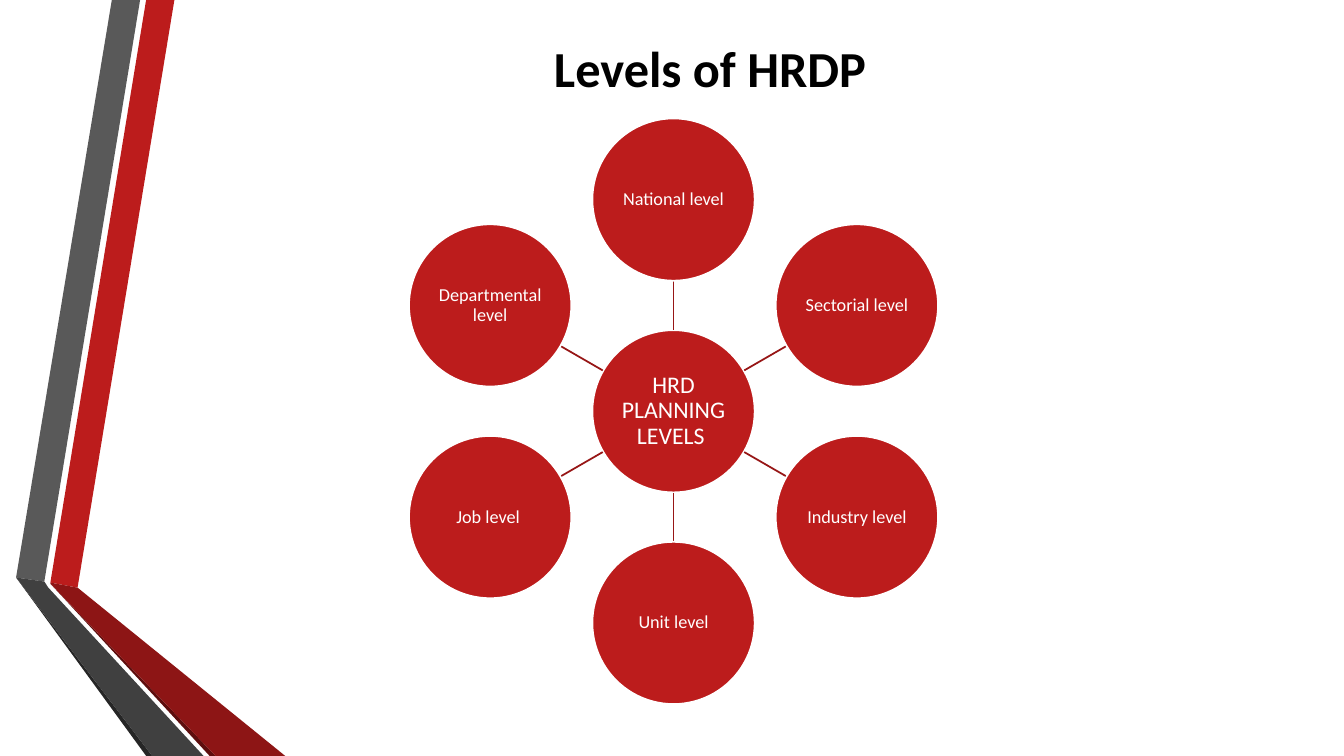
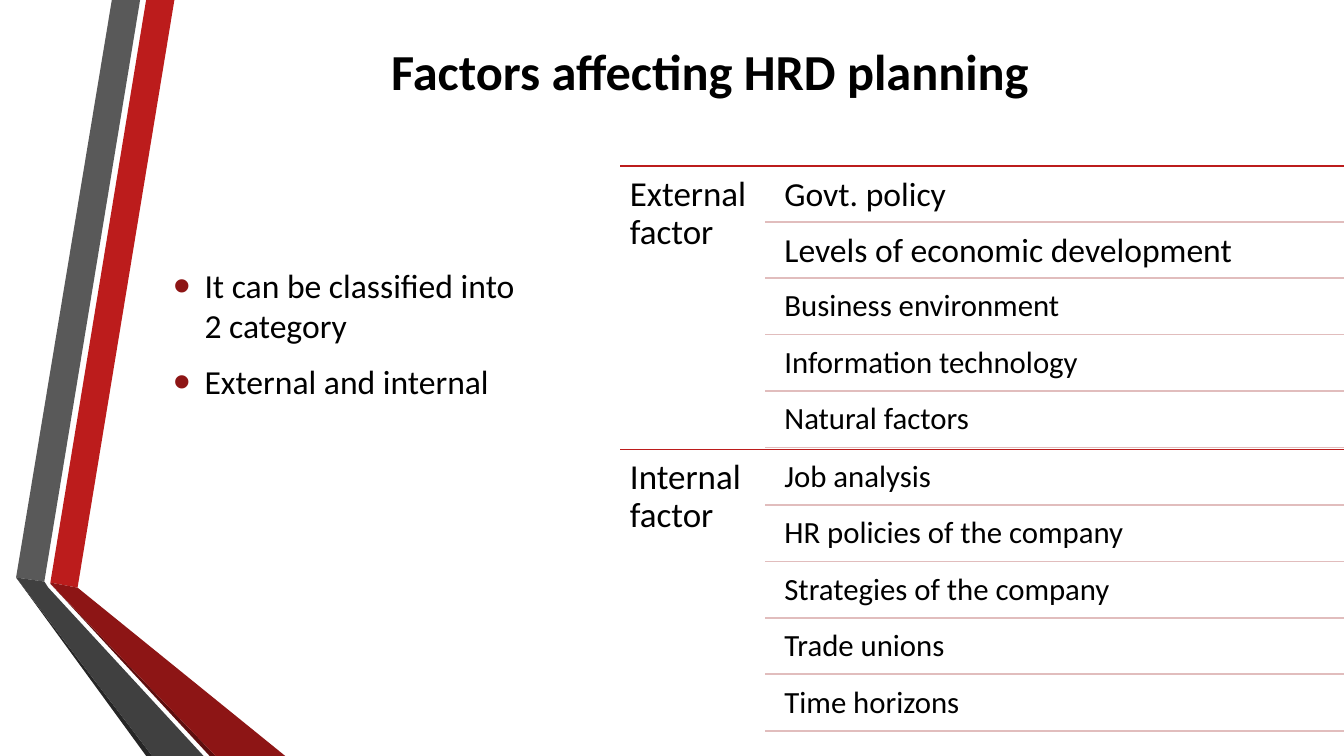
from dataclasses import dataclass
from math import cos, radians, sin

from lxml.etree import SubElement
from pptx import Presentation
from pptx.dml.color import RGBColor
from pptx.enum.shapes import MSO_CONNECTOR, MSO_SHAPE
from pptx.enum.text import MSO_ANCHOR, PP_ALIGN
from pptx.oxml.ns import qn
from pptx.slide import Slide, SlideLayout
from pptx.text.text import TextFrame
from pptx.util import Inches, Pt

FONT = "Calibri"
RED, DARK_RED, SPOKE_RED, PALE_RED = "BC1C1C", "8D1515", "971616", "E1BDBD"
BLACK, WHITE = "000000", "FFFFFF"
SLIDE_WIDTH, SLIDE_HEIGHT = 13.33, 7.5

Point = tuple[float, float]


@dataclass(frozen=True)
class Band:
    """A filled strip of the ribbon on the left."""

    color: str
    outline: tuple[Point, ...]


@dataclass(frozen=True)
class Factor:
    """One factor and its text size."""

    name: str
    size: int = 22


@dataclass(frozen=True)
class FactorGroup:
    """A labelled group of factors starting at a given height."""

    label: str
    top: float
    factors: tuple[Factor, ...]


BANDS = (
    Band(RED, ((0.5, 5.78), (0.77, 5.83), (1.73, 0), (1.45, 0))),
    Band("595959", ((1.39, 0), (1.11, 0), (0.16, 5.73), (0.44, 5.77))),
    Band("262626", ((0.16, 5.73), (1.45, 7.5), (1.51, 7.5))),
    Band("5E0E0E", ((0.5, 5.79), (2.08, 7.5), (2.14, 7.5))),
    Band(DARK_RED, ((0.5, 5.79), (2.14, 7.5), (2.83, 7.5), (0.77, 5.83), (0.5, 5.78))),
    Band("404040", ((2.02, 7.5), (0.48, 5.83), (0.44, 5.77), (0.16, 5.73), (1.51, 7.5))),
)

LEVELS = (
    "National level",
    "Sectorial level",
    "Industry level",
    "Unit level",
    "Job level ",
    "Departmental level",
)
HUB_X, HUB_Y = 6.68, 4.08
RING_RADIUS = 2.1
CIRCLE_SIZE = 1.61
SPOKE_START, SPOKE_END = 0.81, 1.29

CATEGORIES = ("It can be classified into 2 category", "External and internal")
FACTOR_GROUPS = (
    FactorGroup("External factor", 1.65, (
        Factor("Govt. policy", 24),
        Factor("Levels of economic development", 24),
        Factor("Business environment"),
        Factor("Information technology"),
        Factor("Natural factors"),
    )),
    FactorGroup("Internal factor", 4.46, (
        Factor("Job analysis"),
        Factor("HR policies of the company"),
        Factor("Strategies of the company"),
        Factor("Trade unions"),
        Factor("Time horizons"),
    )),
)
GROUP_LEFT, RULE_LEFT, FACTOR_LEFT = 6.15, 7.59, 7.69
ROW_PITCH, ROW_HEIGHT = 0.56, 0.53


def rgb(color: str) -> RGBColor:
    """Turn a hex string into a colour."""
    return RGBColor.from_string(color)


def style_text(frame: TextFrame, size: float, color: str = BLACK, bold: bool = False) -> None:
    """Apply the deck font to every run of a frame."""
    for paragraph in frame.paragraphs:
        for run in paragraph.runs:
            run.font.name = FONT
            run.font.size = Pt(size)
            run.font.bold = bold
            run.font.color.rgb = rgb(color)


def set_margins(frame: TextFrame, margin: float) -> None:
    """Give all four sides of a frame the same margin."""
    frame.margin_left = frame.margin_right = Inches(margin)
    frame.margin_top = frame.margin_bottom = Inches(margin)


def add_ribbon(slide: Slide, layout: SlideLayout) -> None:
    """Draw the ribbon and place it behind everything on the shared layout."""
    for depth, band in enumerate(BANDS, start=2):
        corners = [(Inches(x), Inches(y)) for x, y in band.outline]
        builder = slide.shapes.build_freeform(*corners[0])
        builder.add_line_segments(corners[1:], close=True)
        strip = builder.convert_to_shape()
        strip.shadow.inherit = False
        strip.fill.solid()
        strip.fill.fore_color.rgb = rgb(band.color)
        strip.line.fill.background()
        layout.shapes.element.insert(depth, strip.element)


def add_title(slide: Slide, wording: str, top: float) -> None:
    """Place and format the title placeholder."""
    title = slide.shapes.title
    title.left, title.top = Inches(1.62), Inches(top)
    title.width, title.height = Inches(10.96), Inches(0.7)
    frame = title.text_frame
    frame.text = wording
    frame.vertical_anchor = MSO_ANCHOR.MIDDLE
    frame.paragraphs[0].alignment = PP_ALIGN.CENTER
    style_text(frame, 36, bold=True)


def add_line(slide: Slide, start: Point, end: Point, color: str) -> None:
    """Draw a straight line without a shadow."""
    line = slide.shapes.add_connector(
        MSO_CONNECTOR.STRAIGHT, *(Inches(value) for value in start + end)
    )
    line.line.color.rgb = rgb(color)
    line.line.width = Pt(1.25)
    SubElement(line.element.spPr, qn("a:effectLst"))


def add_text(
    slide: Slide, wording: str, left: float, top: float,
    width: float, height: float, size: float, margin: float = 0.09,
) -> None:
    """Add a wrapped text box with tight line spacing."""
    box = slide.shapes.add_textbox(Inches(left), Inches(top), Inches(width), Inches(height))
    frame = box.text_frame
    frame.word_wrap = True
    set_margins(frame, margin)
    frame.text = wording
    frame.paragraphs[0].line_spacing = 0.9
    style_text(frame, size)


def add_circle(slide: Slide, wording: str, center: Point, size: float) -> None:
    """Draw a labelled circle around a centre."""
    x, y = center
    circle = slide.shapes.add_shape(
        MSO_SHAPE.OVAL, Inches(x - CIRCLE_SIZE / 2), Inches(y - CIRCLE_SIZE / 2),
        Inches(CIRCLE_SIZE), Inches(CIRCLE_SIZE),
    )
    circle.shadow.inherit = False
    circle.fill.solid()
    circle.fill.fore_color.rgb = rgb(RED)
    circle.line.color.rgb = rgb(WHITE)
    circle.line.width = Pt(1.25)
    frame = circle.text_frame
    frame.word_wrap = True
    set_margins(frame, 0.01)
    frame.vertical_anchor = MSO_ANCHOR.MIDDLE
    frame.text = wording
    frame.paragraphs[0].alignment = PP_ALIGN.CENTER
    frame.paragraphs[0].line_spacing = 0.9
    style_text(frame, size, WHITE)


def ring_point(angle: float, radius: float) -> Point:
    """Locate a point around the hub, clockwise from the top."""
    return HUB_X + radius * sin(radians(angle)), HUB_Y - radius * cos(radians(angle))


def add_levels(slide: Slide) -> None:
    """Draw the hub with its ring of levels."""
    add_circle(slide, "HRD PLANNING LEVELS ", (HUB_X, HUB_Y), 17)
    for index, level in enumerate(LEVELS):
        angle = index * 360 / len(LEVELS)
        add_line(slide, ring_point(angle, SPOKE_START), ring_point(angle, SPOKE_END), SPOKE_RED)
        add_circle(slide, level, ring_point(angle, RING_RADIUS), 13)


def add_categories(slide: Slide) -> None:
    """Write the bulleted list of categories."""
    box = slide.shapes.add_textbox(Inches(1.62), Inches(2.58), Inches(3.69), Inches(1.5))
    frame = box.text_frame
    frame.word_wrap = True
    frame.text = "\n".join(CATEGORIES)
    for paragraph in frame.paragraphs:
        paragraph.space_after = Pt(11)
        properties = paragraph._p.get_or_add_pPr()
        properties.set("marL", str(Inches(0.31)))
        properties.set("indent", str(-Inches(0.31)))
        bullet_color = SubElement(properties, qn("a:buClr"))
        SubElement(bullet_color, qn("a:srgbClr"), val=DARK_RED)
        SubElement(properties, qn("a:buSzPct"), val="145000")
        SubElement(properties, qn("a:buFont"), typeface="Arial")
        SubElement(properties, qn("a:buChar"), char="•")
    style_text(frame, 24)


def add_factor_group(slide: Slide, group: FactorGroup) -> None:
    """Draw a group label with its ruled rows of factors."""
    add_line(slide, (GROUP_LEFT, group.top), (SLIDE_WIDTH, group.top), RED)
    add_text(slide, group.label, GROUP_LEFT, group.top, 1.44, 2.82, 25, margin=0.1)
    for index, factor in enumerate(group.factors):
        row_top = group.top + 0.02 + index * ROW_PITCH
        rule_y = row_top + ROW_HEIGHT
        add_text(
            slide, factor.name, FACTOR_LEFT, row_top,
            SLIDE_WIDTH - FACTOR_LEFT, ROW_HEIGHT, factor.size,
        )
        add_line(slide, (RULE_LEFT, rule_y), (SLIDE_WIDTH, rule_y), PALE_RED)


def main() -> None:
    """Build and save the deck."""
    deck = Presentation()
    deck.slide_width, deck.slide_height = Inches(SLIDE_WIDTH), Inches(SLIDE_HEIGHT)
    layout = deck.slide_layouts.get_by_name("Title Only")

    levels_slide = deck.slides.add_slide(layout)
    add_ribbon(levels_slide, layout)
    add_title(levels_slide, "Levels of HRDP ", 0.32)
    add_levels(levels_slide)

    factors_slide = deck.slides.add_slide(layout)
    add_title(factors_slide, "Factors affecting HRD planning ", 0.35)
    add_categories(factors_slide)
    for group in FACTOR_GROUPS:
        add_factor_group(factors_slide, group)

    deck.save("out.pptx")


if __name__ == "__main__":
    main()
